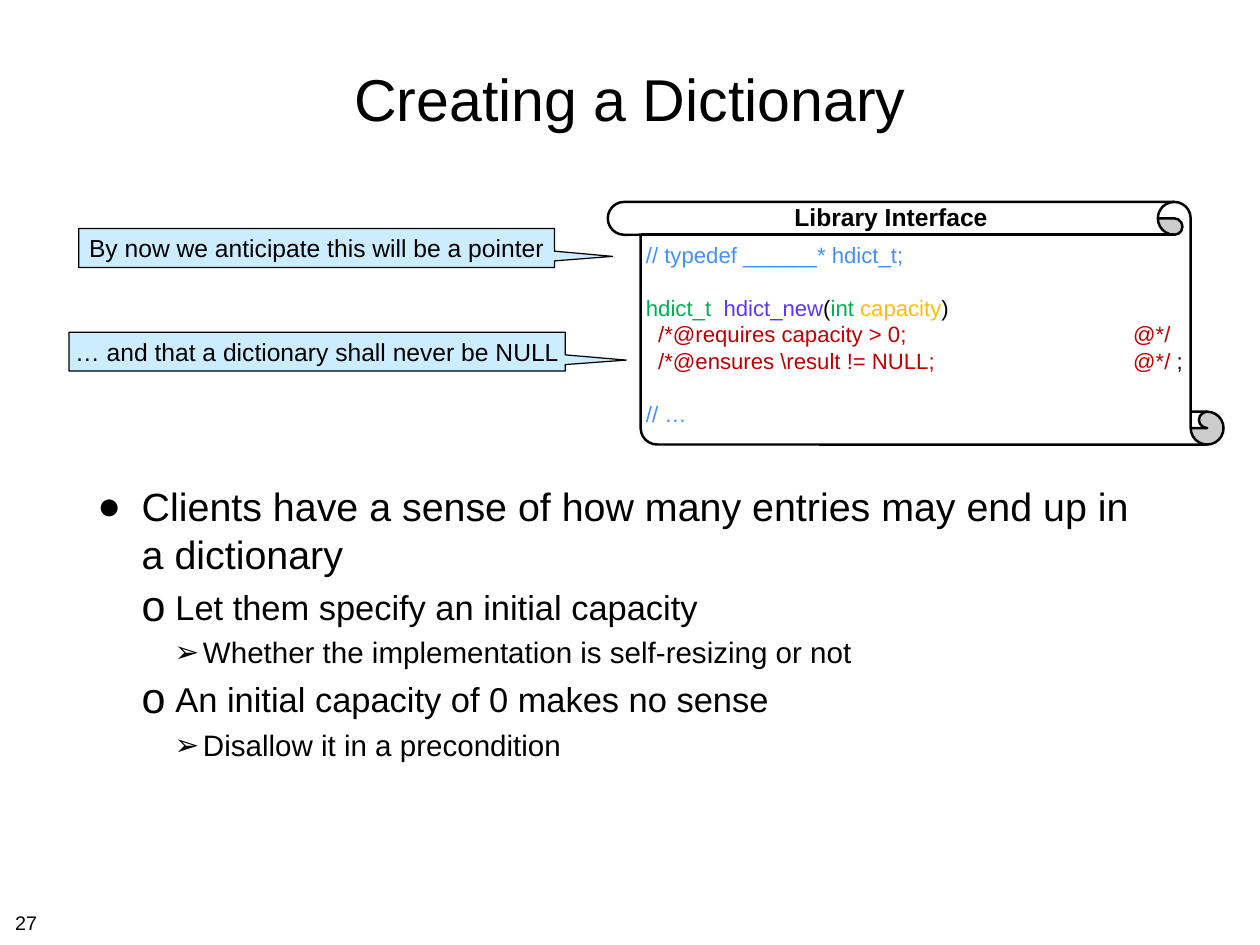
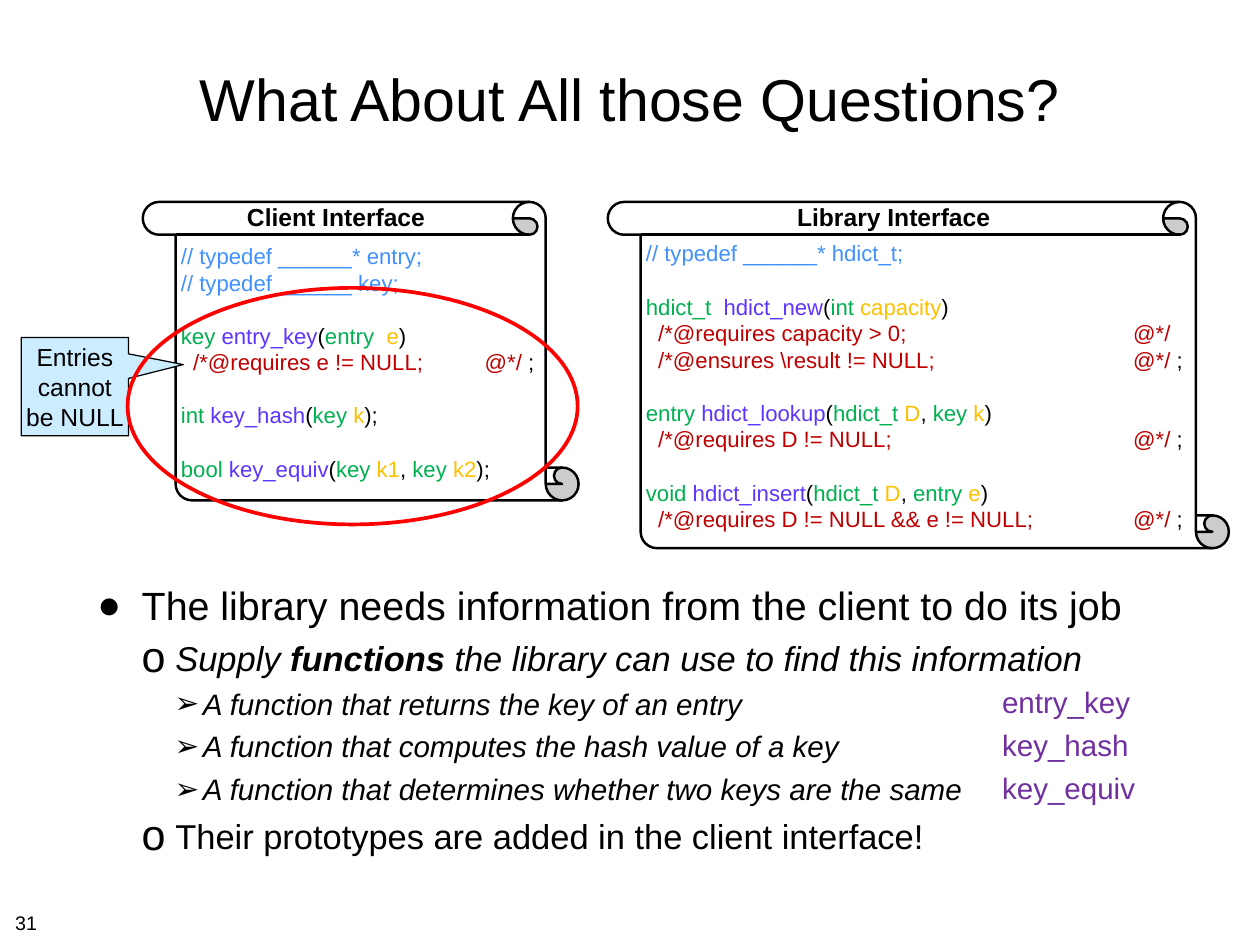
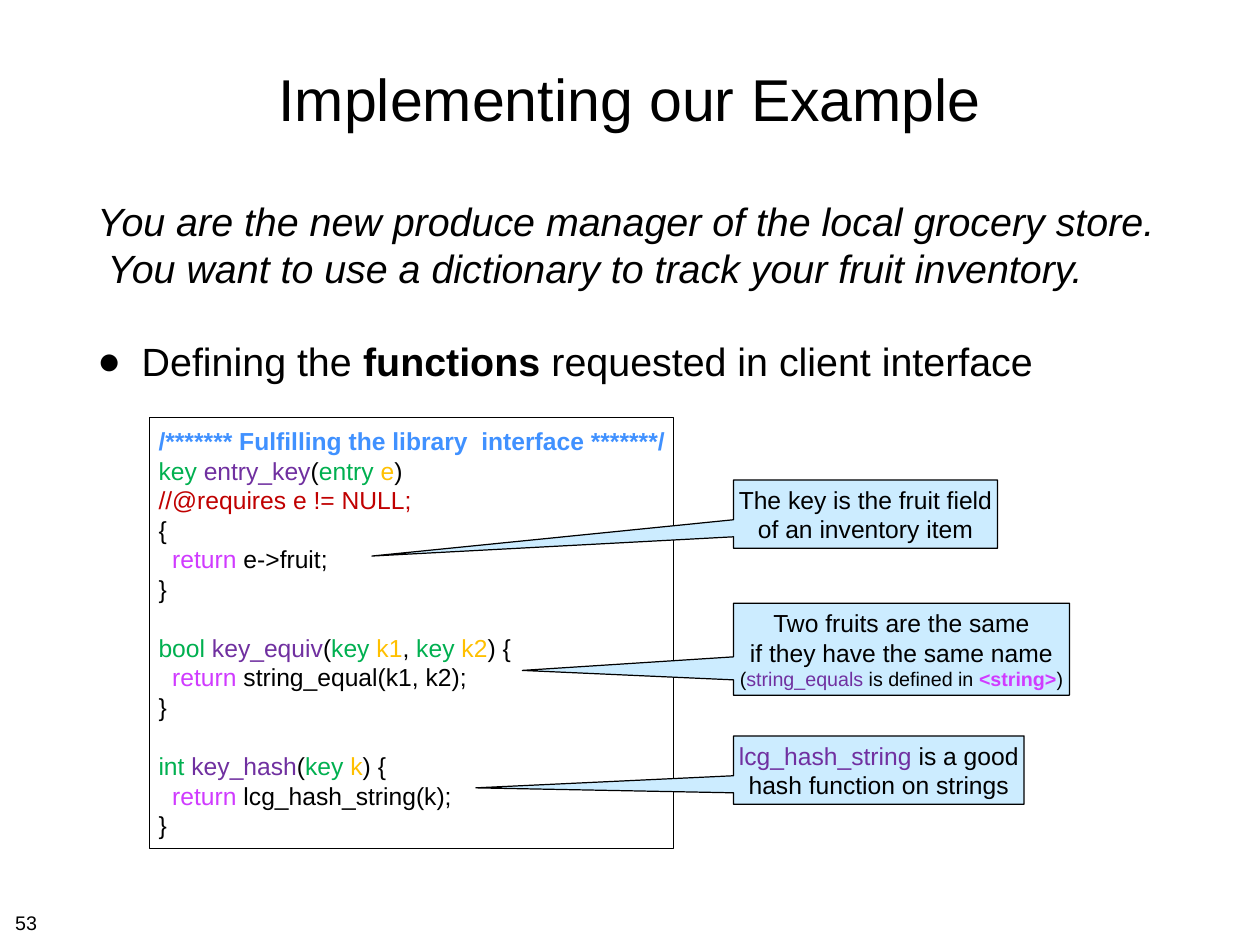
import pptx
import pptx.dml.color
import pptx.enum.shapes
import pptx.enum.text
import pptx.oxml.ns
import pptx.util
from lxml import etree

SHAPE = pptx.enum.shapes.MSO_SHAPE
ALIGN = pptx.enum.text.PP_ALIGN
ANCHOR = pptx.enum.text.MSO_ANCHOR
qn = pptx.oxml.ns.qn


class Deck:
    """Style of the lecture and the current slide, on a grid of 64 by 48 square cells."""

    FONT = "Arial"
    COLORS = {
        "black": "000000", "white": "FFFFFF", "callout": "CCECFF", "ring": "FF0000",
        "c": "4091FF", "t": "00B050", "f": "5E34FF", "v": "FFC000",
        "r": "C00000", "p": "7030A0", "w": "D03BFF",
    }
    LEVELS = [
        dict(size=32, left=2.25, hang=2.25, before=8, char="●", scale=100),
        dict(size=28, left=3.96, hang=1.71, before=7, char="o", scale=125),
        dict(size=24, left=5.36, hang=1.44, before=6, char="➢", scale=100),
    ]
    LINE = 1.2
    ROLL = 1.67

    def __init__(self):
        self.prs = pptx.Presentation()
        self.prs.slide_width = pptx.util.Inches(14.22)
        self.prs.slide_height = pptx.util.Inches(10.67)
        self.cell = self.prs.slide_width / 64

    def emu(self, cells):
        return pptx.util.Emu(round(cells * self.cell))

    def rgb(self, name):
        return pptx.dml.color.RGBColor.from_string(self.COLORS[name])

    def slide(self, title, number):
        self.s = self.prs.slides.add_slide(self.prs.slide_layouts[6])
        self.text((4.68, 1.26, 54.63, 7.38), [title], 48, align=ALIGN.CENTER, anchor=ANCHOR.MIDDLE)
        self.text((0.5, 46.04, 1.67, 1.58), [str(number)], 16, wrap=False)

    def frame(self, sp, inset, anchor=ANCHOR.TOP, wrap=True):
        tf = sp.text_frame
        tf.word_wrap = wrap
        tf.vertical_anchor = anchor
        tf.margin_left, tf.margin_top, tf.margin_right, tf.margin_bottom = map(pptx.util.Inches, inset)
        return tf

    def runs(self, p, markup, size):
        for part in markup.split("~"):
            flags, mark, words = part.rpartition("|")
            r = p.add_run()
            r.text = words
            r.font.name = self.FONT
            r.font.size = pptx.util.Pt(size)
            r.font.bold = "b" in flags
            r.font.italic = "i" in flags
            color = flags.strip("bi") or "black"
            r.font.color.rgb = self.rgb(color)

    def paragraphs(self, tf, lines, size, align=ALIGN.LEFT, before=0, tab=None):
        gap, first = 0, True
        for line in lines:
            if not line:
                gap = size * self.LINE
                continue
            markup, pt = line if isinstance(line, tuple) else (line, size)
            p = tf.paragraphs[0] if first else tf.add_paragraph()
            p.alignment = align
            p.space_before = pptx.util.Pt(round(before + gap, 1))
            self.runs(p, markup, pt)
            if tab:
                tabs = etree.SubElement(p._p.get_or_add_pPr(), qn("a:tabLst"))
                etree.SubElement(tabs, qn("a:tab"), pos=str(self.emu(tab)), algn="l")
            gap, first = 0, False

    def text(self, box, lines, size, align=ALIGN.LEFT, anchor=ANCHOR.TOP, wrap=True, before=0):
        sp = self.s.shapes.add_textbox(*map(self.emu, box))
        self.paragraphs(self.frame(sp, [0.06] * 4, anchor, wrap), lines, size, align, before)

    def bullet(self, p, level):
        pPr = p._p.get_or_add_pPr()
        pPr.set("marL", str(self.emu(level["left"])))
        pPr.set("indent", str(-self.emu(level["hang"])))
        color = etree.SubElement(pPr, qn("a:buClr"))
        etree.SubElement(color, qn("a:srgbClr"), val=self.COLORS["black"])
        etree.SubElement(pPr, qn("a:buSzPct"), val=str(level["scale"] * 1000))
        etree.SubElement(pPr, qn("a:buFont"), typeface=self.FONT)
        etree.SubElement(pPr, qn("a:buChar"), char=level["char"])

    def body(self, top, items, intro=None):
        box = (4.68, top, 54.63, 43.69 - top)
        sp = self.s.shapes.add_textbox(*map(self.emu, box))
        tf = self.frame(sp, [0.06] * 4)
        if intro:
            self.paragraphs(tf, [intro], self.LEVELS[0]["size"], before=8)
        for i, (depth, markup) in enumerate(items):
            level = self.LEVELS[depth]
            p = tf.add_paragraph() if i or intro else tf.paragraphs[0]
            p.space_before = pptx.util.Pt(36.8 if intro and not i else level["before"])
            self.runs(p, markup, level["size"])
            self.bullet(p, level)

    def shape(self, kind, box, fill=None, line="black", width=1):
        sp = self.s.shapes.add_shape(kind, *map(self.emu, box))
        sp.shadow.inherit = False
        if fill:
            sp.fill.solid()
            sp.fill.fore_color.rgb = self.rgb(fill)
        else:
            sp.fill.background()
        sp.line.color.rgb = self.rgb(line)
        sp.line.width = pptx.util.Pt(width)
        return sp

    def scroll(self, heading, box, lines, tab):
        x, y, w, h = box
        sp = self.shape(SHAPE.VERTICAL_SCROLL, box, "white", width=2)
        sp.adjustments[0] = self.ROLL / min(w, h)
        sp._element.spPr.xfrm.set("flipH", "1")
        tf = self.frame(sp, [0.06, 0.06, 0.06, 0], ANCHOR.MIDDLE, False)
        self.paragraphs(tf, lines, 18, tab=tab)
        self.text((x + w / 2 - 6.65, y - 0.22, 10.8, 1.98), ["b|" + heading], 20,
                  align=ALIGN.CENTER, anchor=ANCHOR.MIDDLE, wrap=False)

    def callout(self, box, tip, lines):
        x, y, w, h = box
        sp = self.shape(SHAPE.RECTANGULAR_CALLOUT, box, "callout")
        sp.adjustments[0] = (tip[0] - x) / w - 0.5
        sp.adjustments[1] = (tip[1] - y) / h - 0.5
        tf = self.frame(sp, [0.05] * 4, ANCHOR.MIDDLE, False)
        self.paragraphs(tf, lines, 20, ALIGN.CENTER)

    def listing(self, box, lines):
        sp = self.shape(SHAPE.RECTANGLE, box)
        self.paragraphs(self.frame(sp, [0.1, 0.1, 0.06, 0.06], wrap=False), lines, 20)

    def ring(self, box):
        self.shape(SHAPE.OVAL, box, line="ring", width=3)


LIBRARY_NEW = [
    "c|// typedef ______* hdict_t;",
    "",
    "t|hdict_t  ~f|hdict_new~(~t|int ~v|capacity~)",
    "r|  /*@requires capacity > 0;\t@*/",
    "r|  /*@ensures \\result != NULL;\t@*/~ ;",
    "",
]
LIBRARY_USE = [
    "t|entry ~f|hdict_lookup~(~t|hdict_t ~v|D~, ~t|key ~v|k~)",
    "r|  /*@requires D != NULL;\t@*/~ ;",
    "",
    "t|void ~f|hdict_insert~(~t|hdict_t ~v|D~, ~t|entry ~v|e~)",
    "r|  /*@requires D != NULL && e != NULL;\t@*/~ ;",
]
CLIENT = [
    "c|// typedef ______* entry;",
    "c|// typedef ______ key;",
    "",
    "t|key ~f|entry_key~(~t|entry  ~v|e~)",
    "r|  /*@requires e != NULL;\t@*/~ ;",
    "",
    "t|int ~f|key_hash~(~t|key ~v|k~);",
    "",
    "t|bool ~f|key_equiv~(~t|key ~v|k1~, ~t|key ~v|k2~);",
]
FULFILLING = [
    "cb|/******* Fulfilling the library  interface *******/",
    "t|key ~p|entry_key~(~t|entry ~v|e~)",
    "r|//@requires e != NULL;",
    "{",
    "w|  return ~e->fruit;",
    "}",
    "",
    "t|bool ~p|key_equiv~(~t|key ~v|k1~, ~t|key ~v|k2~) {",
    "w|  return ~string_equal(k1, k2);",
    "}",
    "",
    "t|int ~p|key_hash~(~t|key ~v|k~) {",
    "w|  return ~lcg_hash_string(k);",
    "}",
]


def creating(deck):
    deck.slide("Creating a Dictionary", 27)
    deck.body(24.25, [
        (0, "Clients have a sense of how many entries may end up in a dictionary"),
        (1, "Let them specify an initial capacity"),
        (2, "Whether the implementation is self-resizing or not"),
        (1, "An initial capacity of 0 makes no sense"),
        (2, "Disallow it in a precondition"),
    ])
    deck.scroll("Library Interface", (30.87, 10.26, 31.28, 12.33), LIBRARY_NEW + ["c|// …"], 24.75)
    deck.callout((4, 11.61, 24.17, 1.98), (31.12, 13.03),
                 ["By now we anticipate this will be a pointer"])
    deck.callout((3.51, 16.88, 25.2, 1.98), (31.81, 18.3),
                 ["… and that a dictionary shall never be NULL"])


def questions(deck):
    deck.slide("What About All those Questions?", 31)
    deck.body(29.25, [
        (0, "The library needs information from the client to do its job"),
        (1, "i|Supply ~bi|functions~i| the library can use to find this information"),
        (2, "i|A function that returns the key of an entry"),
        (2, "i|A function that computes the hash value of a key"),
        (2, "i|A function that determines whether two keys are the same"),
        (1, "Their prototypes are added in the client interface!"),
    ])
    deck.text((50.63, 34.5, 8, 6), ["p|entry_key", "p|key_hash", "p|key_equiv"], 24, before=6)
    deck.scroll("Library Interface", (30.87, 10.26, 31.55, 17.6), LIBRARY_NEW + LIBRARY_USE, 24.75)
    deck.scroll("Client Interface", (7.25, 10.26, 22.14, 15.17), CLIENT, 15.43)
    deck.callout((1.08, 17.15, 5.45, 5), (9.31, 18.53), ["Entries", "cannot", "be NULL"])
    deck.ring((6.48, 14.63, 22.86, 12.02))


def implementing(deck):
    deck.slide("Implementing our Example", 53)
    deck.body(9.76, [(0, "Defining the ~b|functions~ requested in client interface")],
              intro="i|You are the new produce manager of the local grocery store.  "
                    "You want to use a dictionary to track your fruit inventory.")
    deck.listing((7.61, 21.2, 26.6, 21.92), FULFILLING)
    left = 37.26
    deck.callout((left, 24.39, 13.41, 3.47), (18.89, 28.26),
                 ["The key is the fruit field", "of an inventory item"])
    deck.callout((left, 30.65, 17.06, 4.68), (26.53, 34.07),
                 ["Two fruits are the same", "if they have the same name",
                  ("(~p|string_equals~ is defined in ~wb|<string>~)", 16)])
    deck.callout((left, 37.4, 14.76, 3.47), (24.17, 40.04),
                 ["p|lcg_hash_string~ is a good", "hash function on strings"])


def main():
    deck = Deck()
    for build in (creating, questions, implementing):
        build(deck)
    deck.prs.save("out.pptx")


if __name__ == "__main__":
    main()
